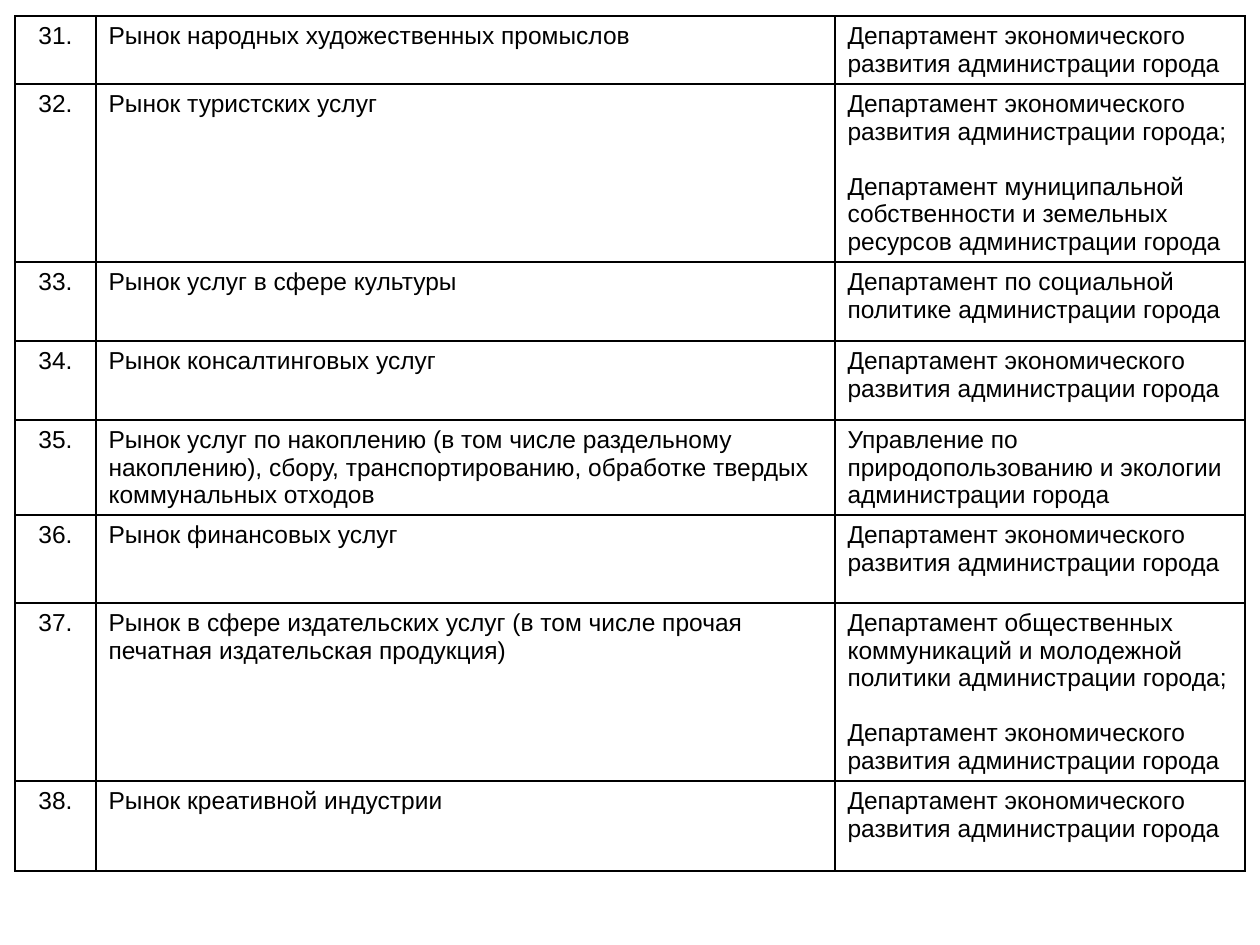
from dataclasses import dataclass

from lxml.etree import SubElement
from pptx import Presentation
from pptx.dml.color import RGBColor
from pptx.enum.text import PP_ALIGN
from pptx.oxml.ns import qn
from pptx.table import Table, _Cell
from pptx.util import Emu, Pt

EMU_PER_PX = 914400 / 126


@dataclass(frozen=True)
class Theme:
    font: str = "Arial"
    size: Pt = Pt(14)
    paragraph_gap: Pt = Pt(15.8)
    text: RGBColor = RGBColor(0, 0, 0)
    fill: RGBColor = RGBColor(255, 255, 255)
    border: str = "000000"
    border_width: Pt = Pt(1)


@dataclass(frozen=True)
class Market:
    name: str
    departments: tuple[str, ...]
    height: int


THEME = Theme()
FIRST_NUMBER = 31
TABLE_LEFT, TABLE_TOP = 15, 16
COLUMN_WIDTHS = (81, 739, 410)
ECONOMY = "Департамент экономического развития администрации города"
MARKETS = (
    Market("Рынок народных художественных промыслов", (ECONOMY,), 68),
    Market(
        "Рынок туристских услуг",
        (
            f"{ECONOMY};",
            "Департамент муниципальной собственности и земельных ресурсов администрации города",
        ),
        178,
    ),
    Market(
        "Рынок услуг в сфере культуры",
        ("Департамент по социальной политике администрации города",),
        79,
    ),
    Market("Рынок консалтинговых услуг", (ECONOMY,), 79),
    Market(
        "Рынок услуг по накоплению (в том числе раздельному накоплению), сбору, "
        "транспортированию, обработке твердых коммунальных отходов",
        ("Управление по природопользованию и экологии администрации города",),
        95,
    ),
    Market("Рынок финансовых услуг", (ECONOMY,), 88),
    Market(
        "Рынок в сфере издательских услуг (в том числе прочая печатная издательская продукция)",
        (
            "Департамент общественных коммуникаций и молодежной политики администрации города;",
            ECONOMY,
        ),
        178,
    ),
    Market("Рынок креативной индустрии", (ECONOMY,), 90),
)


def px(length: int) -> Emu:
    return Emu(round(length * EMU_PER_PX))


def draw_borders(cell: _Cell) -> None:
    properties = cell._tc.get_or_add_tcPr()
    for index, side in enumerate(("lnL", "lnR", "lnT", "lnB")):
        line = properties.makeelement(qn(f"a:{side}"), {"w": str(THEME.border_width)})
        properties.insert(index, line)
        fill = SubElement(line, qn("a:solidFill"))
        SubElement(fill, qn("a:srgbClr"), val=THEME.border)


def fill_cell(cell: _Cell, texts: tuple[str, ...], alignment: PP_ALIGN) -> None:
    cell.fill.solid()
    cell.fill.fore_color.rgb = THEME.fill
    draw_borders(cell)
    cell.text_frame.text = "\n".join(texts)
    for index, para in enumerate(cell.text_frame.paragraphs):
        para.alignment = alignment
        if index:
            para.space_before = THEME.paragraph_gap
        for span in para.runs:
            span.font.name = THEME.font
            span.font.size = THEME.size
            span.font.color.rgb = THEME.text


def fill_row(table: Table, index: int, market: Market) -> None:
    table.rows[index].height = px(market.height)
    number, name, departments = table.rows[index].cells
    fill_cell(number, (f"{FIRST_NUMBER + index}.",), PP_ALIGN.CENTER)
    fill_cell(name, (market.name,), PP_ALIGN.LEFT)
    fill_cell(departments, market.departments, PP_ALIGN.LEFT)


def main() -> None:
    deck = Presentation()
    deck.slide_width, deck.slide_height = px(1260), px(945)
    page = deck.slides.add_slide(deck.slide_layouts[6])
    table = page.shapes.add_table(
        len(MARKETS),
        len(COLUMN_WIDTHS),
        px(TABLE_LEFT),
        px(TABLE_TOP),
        px(sum(COLUMN_WIDTHS)),
        px(sum(market.height for market in MARKETS)),
    ).table
    table.first_row = False
    table.horz_banding = False
    for column, width in zip(table.columns, COLUMN_WIDTHS):
        column.width = px(width)
    for index, market in enumerate(MARKETS):
        fill_row(table, index, market)
    deck.save("out.pptx")


if __name__ == "__main__":
    main()
